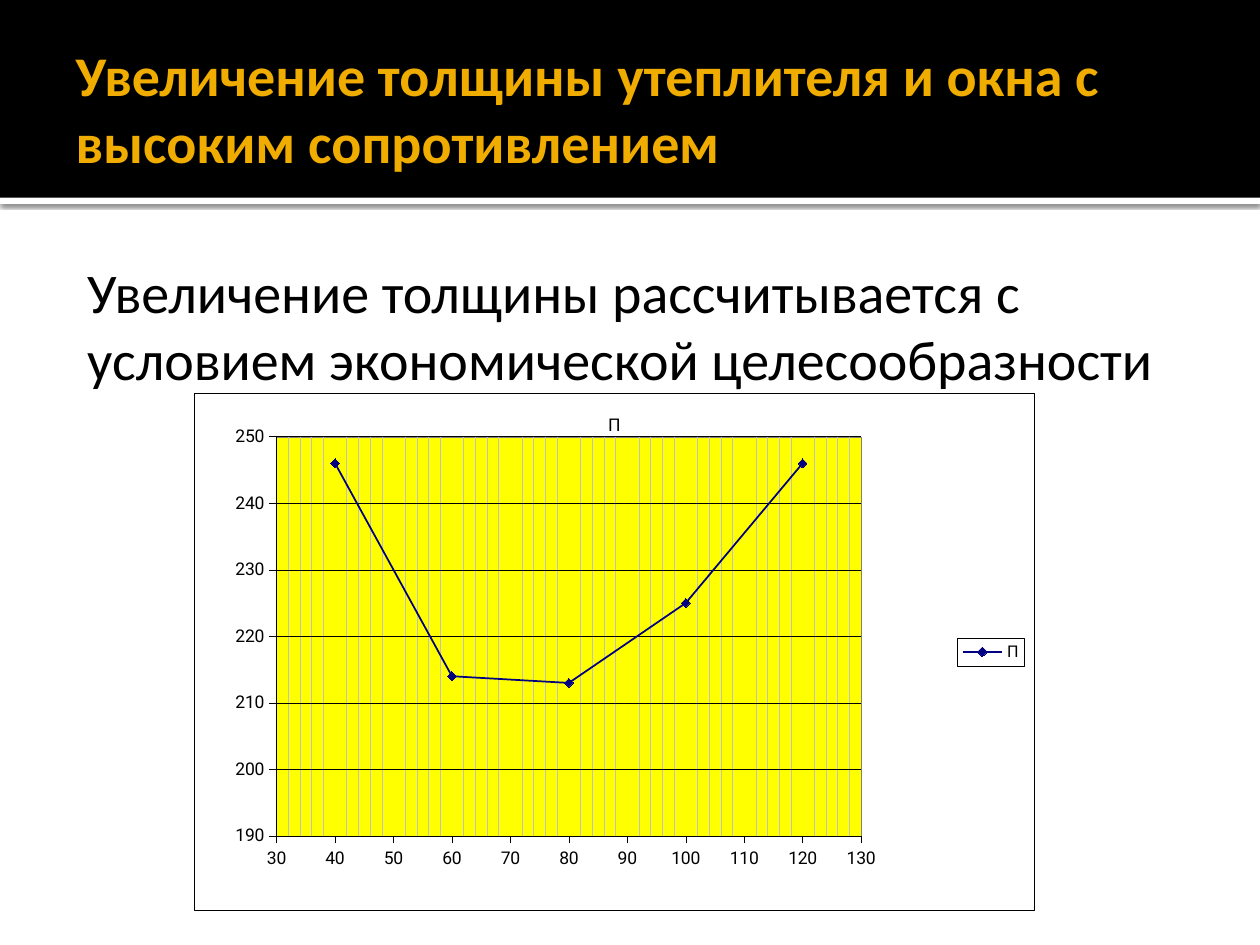
from lxml.etree import SubElement
from pptx import Presentation
from pptx.chart.data import XyChartData
from pptx.dml.color import RGBColor
from pptx.enum.chart import XL_CHART_TYPE, XL_LEGEND_POSITION, XL_MARKER_STYLE, XL_TICK_MARK
from pptx.enum.shapes import MSO_SHAPE
from pptx.enum.text import MSO_ANCHOR, MSO_AUTO_SIZE, PP_ALIGN
from pptx.oxml import parse_xml
from pptx.oxml.ns import nsdecls, qn
from pptx.util import Pt


def color(value):
    return RGBColor.from_string(value)


def outline(line, value, width):
    line.color.rgb = color(value)
    line.width = Pt(width)


presentation = Presentation()
presentation.slide_width, presentation.slide_height = Pt(720), Pt(540)
slide = presentation.slides.add_slide(presentation.slide_layouts[1])
tree = slide.shapes._spTree
heading = slide.shapes.title
statement = slide.placeholders[1]

for top, height, fill in [(113, 3.6, "FFFFFF"), (0, 113, "000000")]:
    band = slide.shapes.add_shape(MSO_SHAPE.RECTANGLE, Pt(0), Pt(top), Pt(720), Pt(height))
    band.shadow.inherit = False
    band.fill.solid()
    band.fill.fore_color.rgb = color(fill)
    band.line.fill.background()
    if fill == "FFFFFF":
        effects = band._element.spPr.find(qn("a:effectLst"))
        effects.append(parse_xml(
            f'<a:outerShdw {nsdecls("a")} blurRad="31750" dist="10160" dir="5400000" rotWithShape="0">'
            '<a:srgbClr val="000000"><a:alpha val="60000"/></a:srgbClr></a:outerShdw>'))

for holder, wording, box, insets, anchor, fill, bold in [
    (statement, "Увеличение толщины рассчитывается с условием экономической целесообразности",
     (36, 139.7, 648, 364.3), (4.3, 7.2, 7.2, 3.6), MSO_ANCHOR.TOP, "000000", False),
    (heading, "Увеличение толщины утеплителя и окна с высоким сопротивлением",
     (36, 12.2, 648, 98.6), (7.2, 3.6, 3.6, 3.6), MSO_ANCHOR.MIDDLE, "F0AD00", True),
]:
    tree.append(holder._element)
    holder.left, holder.top, holder.width, holder.height = [Pt(length) for length in box]
    frame = holder.text_frame
    frame.text = wording
    frame.word_wrap = True
    frame.auto_size = MSO_AUTO_SIZE.NONE
    frame.vertical_anchor = anchor
    frame.margin_left, frame.margin_top, frame.margin_right, frame.margin_bottom = [
        Pt(inset) for inset in insets]
    paragraph = frame.paragraphs[0]
    paragraph.alignment = PP_ALIGN.LEFT
    paragraph.space_before = Pt(0)
    font = paragraph.runs[0].font
    font.name, font.size, font.bold = "Calibri", Pt(32), bold
    font.color.rgb = color(fill)

properties = statement.text_frame.paragraphs[0]._p.get_or_add_pPr()
properties.set("marL", str(Pt(9.4)))
properties.set("indent", "0")
SubElement(properties, qn("a:buNone"))

cost_data = XyChartData()
cost_points = cost_data.add_series("П")
for thickness, cost in zip(range(40, 121, 20), [246, 214, 213, 225, 246]):
    cost_points.add_data_point(thickness, cost)
chart = slide.shapes.add_chart(XL_CHART_TYPE.XY_SCATTER_SMOOTH, Pt(110.9), Pt(224.6),
                               Pt(480.2), Pt(295.9), cost_data).chart
chart.font.name, chart.font.size = "Roboto", Pt(10)
chart.font.color.rgb = color("000000")

chart.has_title = True
chart.chart_title.text_frame.text = "П"
chart.chart_title.include_in_layout = True
title_font = chart.chart_title.text_frame.paragraphs[0].runs[0].font
title_font.name, title_font.size, title_font.bold = "Roboto", Pt(10), False
title_font.color.rgb = color("000000")

chart.has_legend = True
chart.legend.position = XL_LEGEND_POSITION.RIGHT
chart.legend.include_in_layout = False
chart.legend.font.name, chart.legend.font.size = "Roboto", Pt(9.2)
chart.legend.font.color.rgb = color("000000")

for axis, low, high in [(chart.category_axis, 30, 130), (chart.value_axis, 190, 250)]:
    axis.minimum_scale, axis.maximum_scale, axis.major_unit = low, high, 10
    axis.major_tick_mark = XL_TICK_MARK.OUTSIDE
    axis.minor_tick_mark = XL_TICK_MARK.NONE
    axis.has_major_gridlines = False
    axis.tick_labels.font.name, axis.tick_labels.font.size = "Roboto", Pt(10)
    axis.tick_labels.font.color.rgb = color("000000")
    axis.tick_labels.number_format = "General"
    axis.tick_labels.number_format_is_linked = False
    outline(axis.format.line, "000000", 0.25)
chart.value_axis.has_major_gridlines = True
outline(chart.value_axis.major_gridlines.format.line, "000000", 0.25)

thickness_axis = chart.category_axis
thickness_axis.has_minor_gridlines = True
thickness_axis.minor_unit = 2
thickness_axis._element.find(qn("c:minorGridlines")).append(parse_xml(
    f'<c:spPr {nsdecls("c", "a")}><a:ln w="3175"><a:solidFill>'
    '<a:srgbClr val="C0C0C0"/></a:solidFill></a:ln></c:spPr>'))

curve = chart.plots[0].series[0]
curve.smooth = True
outline(curve.format.line, "000080", 1)
curve.marker.style, curve.marker.size = XL_MARKER_STYLE.DIAMOND, 5
curve.marker.format.fill.solid()
curve.marker.format.fill.fore_color.rgb = color("000080")
outline(curve.marker.format.line, "000080", 0.25)
chart.plots[0].vary_by_categories = False

plot_area = chart._chartSpace.chart.plotArea
for old_layout in plot_area.findall(qn("c:layout")):
    plot_area.remove(old_layout)
plot_area.insert(0, parse_xml(
    f'<c:layout {nsdecls("c")}><c:manualLayout><c:layoutTarget val="inner"/>'
    '<c:xMode val="edge"/><c:yMode val="edge"/><c:x val="0.098"/><c:y val="0.084"/>'
    '<c:w val="0.696"/><c:h val="0.772"/></c:manualLayout></c:layout>'))

legend_text = chart.legend._element.find(qn("c:txPr"))
for attach, fill, border in [
    (plot_area.append, "FFFF00", "808080"),
    (chart._chartSpace.chart.addnext, "FFFFFF", "000000"),
    (legend_text.addprevious, "FFFFFF", "000000"),
]:
    attach(parse_xml(
        f'<c:spPr {nsdecls("c", "a")}><a:solidFill><a:srgbClr val="{fill}"/></a:solidFill>'
        f'<a:ln w="3175"><a:solidFill><a:srgbClr val="{border}"/></a:solidFill></a:ln></c:spPr>'))

presentation.save("out.pptx")
